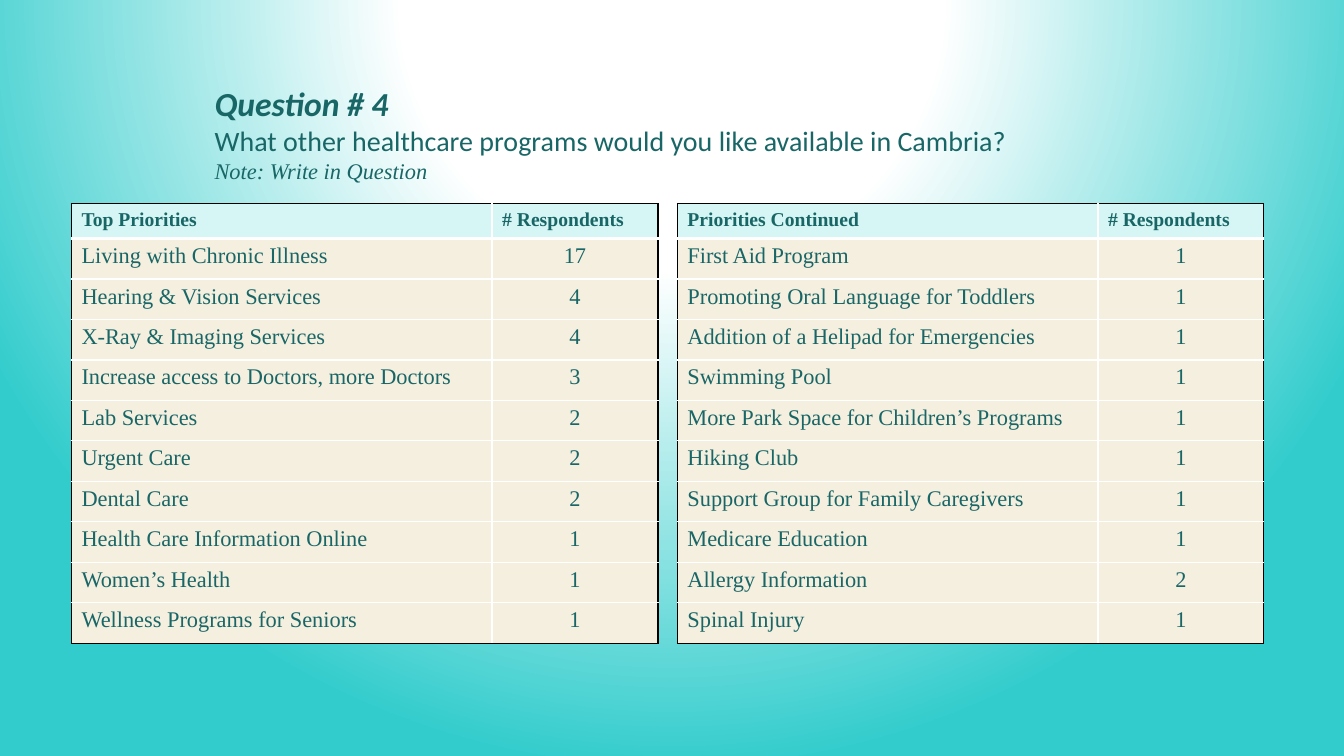
from pptx import Presentation
from pptx.dml.color import RGBColor
from pptx.enum.text import PP_ALIGN
from pptx.oxml import parse_xml
from pptx.oxml.ns import nsdecls
from pptx.util import Cm, Pt

TEAL = RGBColor(0x19, 0x66, 0x66)
TURQUOISE = RGBColor(0x33, 0xCC, 0xCC)
PALE_AQUA = RGBColor(0xD6, 0xF5, 0xF5)
CREAM = RGBColor(0xF5, 0xEF, 0xE0)
WHITE = RGBColor(0xFF, 0xFF, 0xFF)
BLACK = RGBColor(0x00, 0x00, 0x00)
SANS, SERIF = "Calibri", "Times New Roman"

HEADER_HEIGHT, ROW_HEIGHT = Cm(0.88), Cm(1.02)
COLUMN_WIDTHS = (Cm(10.6), Cm(4.18))
TABLE_TOP = Cm(5.13)

TABLES = [
    (Cm(17.07), [
        ("Priorities Continued", "# Respondents"),
        ("First Aid Program", "1"),
        ("Promoting Oral Language for Toddlers", "1"),
        ("Addition of a Helipad for Emergencies", "1"),
        ("Swimming Pool", "1"),
        ("More Park Space for Children’s Programs", "1"),
        ("Hiking Club", "1"),
        ("Support Group for Family Caregivers", "1"),
        ("Medicare Education", "1"),
        ("Allergy Information", "2"),
        ("Spinal Injury", "1"),
    ]),
    (Cm(1.8), [
        ("Top Priorities", "# Respondents"),
        ("Living with Chronic Illness", "17"),
        ("Hearing & Vision Services", "4"),
        ("X-Ray & Imaging Services", "4"),
        ("Increase access to Doctors, more Doctors", "3"),
        ("Lab Services", "2"),
        ("Urgent Care", "2"),
        ("Dental Care", "2"),
        ("Health Care Information Online", "1"),
        ("Women’s Health", "1"),
        ("Wellness Programs for Seniors", "1"),
    ]),
]


def style_text(para, size, font, bold=False, italic=False):
    for span in para.runs:
        span.font.size = Pt(size)
        span.font.name = font
        span.font.bold = bold
        span.font.italic = italic
        span.font.color.rgb = TEAL


def set_borders(cell, borders):
    """Draw (side, colour, points) borders, given in the order L, R, T, B."""
    properties = cell._tc.get_or_add_tcPr()
    for index, (side, colour, points) in enumerate(borders):
        properties.insert(index, parse_xml(
            f'<a:ln{side} {nsdecls("a")} w="{Pt(points)}"><a:solidFill>'
            f'<a:srgbClr val="{colour}"/></a:solidFill></a:ln{side}>'))


deck = Presentation()
deck.slide_width, deck.slide_height = Cm(33.87), Cm(19.05)
page = deck.slides.add_slide(deck.slide_layouts[6])

# Radial background
stops = "".join(
    f'<a:gs pos="{position}"><a:srgbClr val="{colour}"/></a:gs>'
    for position, colour in ((0, WHITE), (35000, WHITE), (100000, TURQUOISE)))
page.element.cSld.insert(0, parse_xml(
    f'<p:bg {nsdecls("p", "a")}><p:bgPr><a:gradFill rotWithShape="1">'
    f'<a:gsLst>{stops}</a:gsLst><a:path path="circle">'
    '<a:fillToRect l="50000" t="-80000" r="50000" b="180000"/></a:path>'
    '</a:gradFill><a:effectLst/></p:bgPr></p:bg>'))

# Tables
for left, rows in TABLES:
    height = HEADER_HEIGHT + ROW_HEIGHT * (len(rows) - 1)
    table = page.shapes.add_table(
        len(rows), 2, left, TABLE_TOP, sum(COLUMN_WIDTHS), height).table
    table.horz_banding = False
    for column, width in zip(table.columns, COLUMN_WIDTHS):
        column.width = width
    for r, values in enumerate(rows):
        is_header, is_last = r == 0, r == len(rows) - 1
        table.rows[r].height = HEADER_HEIGHT if is_header else ROW_HEIGHT
        for c, value in enumerate(values):
            cell = table.cell(r, c)
            cell.fill.solid()
            cell.fill.fore_color.rgb = PALE_AQUA if is_header else CREAM
            para = cell.text_frame.paragraphs[0]
            para.text = value
            style_text(para, 14 if is_header else 16, SERIF, bold=is_header)
            if c == 1 and not is_header:
                para.alignment = PP_ALIGN.CENTER
            set_borders(cell, [
                ("L", BLACK if c == 0 else WHITE, 1),
                ("R", BLACK if c == 1 else WHITE, 1),
                ("T", BLACK if is_header else WHITE, 3 if r == 1 else 1),
                ("B", BLACK if is_last else WHITE, 3 if is_header else 1),
            ])

# Question heading
box = page.shapes.add_textbox(Cm(5.16), Cm(1.96), Cm(22.12), Cm(3.68))
frame = box.text_frame
frame.word_wrap = True
frame.text = ("Question # 4\n"
              "What other healthcare programs would you like available in Cambria?\n"
              "Note: Write in Question")
question, wording, note = frame.paragraphs
style_text(question, 24, SANS, bold=True, italic=True)
style_text(wording, 20, SANS)
style_text(note, 16, SERIF, italic=True)

deck.save("out.pptx")
